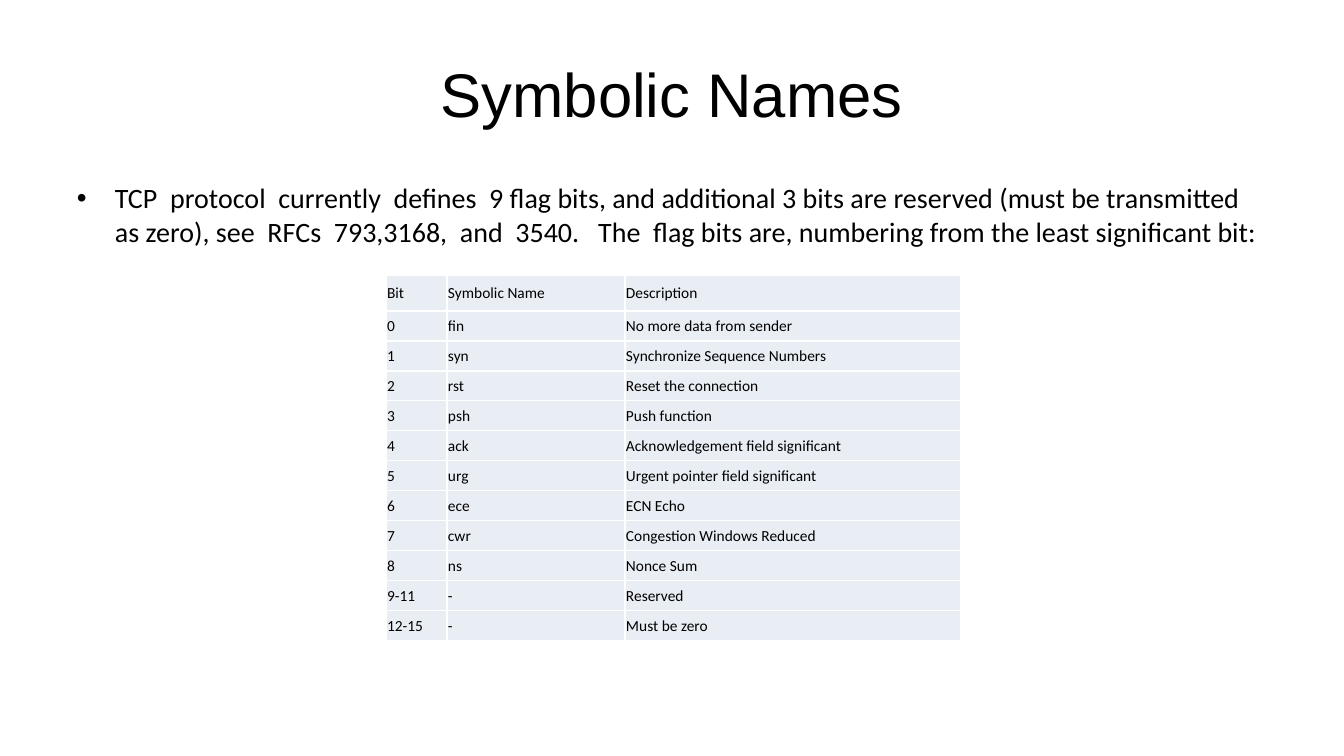
from lxml.etree import SubElement
from pptx import Presentation
from pptx.dml.color import RGBColor
from pptx.enum.text import MSO_ANCHOR, PP_ALIGN
from pptx.oxml.ns import qn
from pptx.util import Pt

EMU_PER_PX = 914400 / 100.8
COLORS = {"text": "000000", "cell": "E9EDF4", "border": "FFFFFF"}
FORMATS = {
    "title": {"name": "Arial", "size": Pt(44), "bold": False},
    "body": {"name": "Calibri", "size": Pt(20), "bold": False},
    "cell": {"name": "Calibri", "size": Pt(11), "bold": False},
}
FLAGS = [
    ("Bit", "Symbolic Name", "Description"),
    ("0", "fin", "No more data from sender"),
    ("1", "syn", "Synchronize Sequence Numbers"),
    ("2", "rst", "Reset the connection"),
    ("3", "psh", "Push function"),
    ("4", "ack", "Acknowledgement field significant"),
    ("5", "urg", "Urgent pointer field significant"),
    ("6", "ece", "ECN Echo"),
    ("7", "cwr", "Congestion Windows Reduced"),
    ("8", "ns", "Nonce Sum"),
    ("9-11", "-", "Reserved"),
    ("12-15", "-", "Must be zero"),
]
COLUMN_WIDTHS = [61, 178, 336]
HEADER_HEIGHT, ROW_HEIGHT = 36, 30


def px(length):
    return round(length * EMU_PER_PX)


def write(paragraph, text, style):
    span = paragraph.add_run()
    span.text = text
    for attribute, value in FORMATS[style].items():
        setattr(span.font, attribute, value)
    span.font.color.rgb = RGBColor.from_string(COLORS["text"])


deck = Presentation()
deck.slide_width, deck.slide_height = px(1344), px(756)
page = deck.slides.add_slide(deck.slide_layouts[5])

# Title
title = page.shapes.title
title.left, title.top, title.width, title.height = px(67), px(30), px(1210), px(126)
title.text_frame.vertical_anchor = MSO_ANCHOR.MIDDLE
heading = title.text_frame.paragraphs[0]
heading.alignment = PP_ALIGN.CENTER
write(heading, "Symbolic Names", "title")

# Bulleted introduction
body = page.shapes.add_textbox(px(67), px(176), px(1210), px(499))
body.text_frame.word_wrap = True
intro = body.text_frame.paragraphs[0]
properties = intro._p.get_or_add_pPr()
properties.set("marL", str(px(38)))
properties.set("indent", str(-px(38)))
SubElement(properties, qn("a:buFont"), typeface="Arial")
SubElement(properties, qn("a:buChar"), char="•")
write(
    intro,
    "TCP  protocol  currently  defines  9 flag bits, and additional 3 bits are reserved "
    "(must be transmitted as zero), see  RFCs  793,3168,  and  3540.   The  flag bits are, "
    "numbering from the least significant bit:",
    "body",
)

# Table of flag bits
row_heights = [HEADER_HEIGHT] + [ROW_HEIGHT] * (len(FLAGS) - 1)
table = page.shapes.add_table(
    len(FLAGS), len(COLUMN_WIDTHS),
    px(386), px(275), px(sum(COLUMN_WIDTHS)), px(sum(row_heights)),
).table
table.first_row = table.horz_banding = False
for column, width in zip(table.columns, COLUMN_WIDTHS):
    column.width = px(width)

for row, height, texts in zip(table.rows, row_heights, FLAGS):
    row.height = px(height)
    for cell, text in zip(row.cells, texts):
        cell.margin_left = cell.margin_right = cell.margin_top = px(1)
        cell.margin_bottom = 0
        cell.vertical_anchor = MSO_ANCHOR.MIDDLE
        write(cell.text_frame.paragraphs[0], text, "cell")
        # Borders come before the fill in the cell properties
        cell_properties = cell._tc.get_or_add_tcPr()
        for side in ("lnL", "lnR", "lnT", "lnB"):
            line = SubElement(cell_properties, qn(f"a:{side}"), w=str(Pt(1)))
            fill = SubElement(line, qn("a:solidFill"))
            SubElement(fill, qn("a:srgbClr"), val=COLORS["border"])
        cell.fill.solid()
        cell.fill.fore_color.rgb = RGBColor.from_string(COLORS["cell"])

deck.save("out.pptx")
